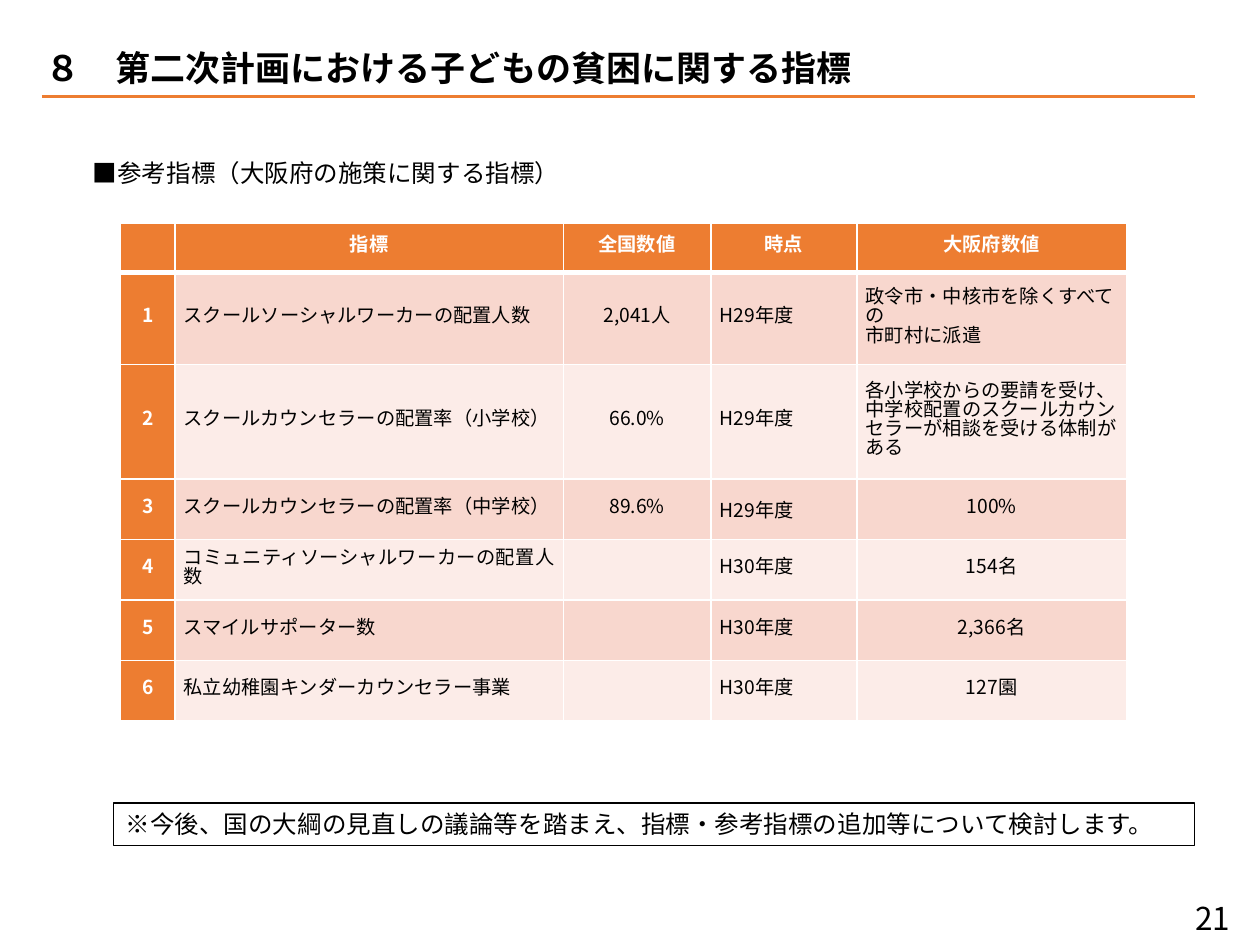
"""Build the slide of reference indicators on child poverty."""
from lxml import etree
from pptx import Presentation
from pptx.dml.color import RGBColor
from pptx.enum.shapes import MSO_CONNECTOR, MSO_SHAPE
from pptx.enum.text import MSO_ANCHOR, PP_ALIGN
from pptx.oxml.ns import qn
from pptx.util import Pt

LEFT, CENTER, JUSTIFY = PP_ALIGN.LEFT, PP_ALIGN.CENTER, PP_ALIGN.JUSTIFY
MIDDLE = MSO_ANCHOR.MIDDLE
FONT = "Noto Sans CJK JP"
COLORS = {"accent": "ED7D31", "dark_band": "F8D7CE", "light_band": "FCECE8",
          "text": "000000", "white": "FFFFFF"}


def color(name):
    return RGBColor.from_string(COLORS[name])


def write(frame, text, size=14, ink="text", bold=False, align=LEFT, spacing=None, wrap=True):
    frame.word_wrap = wrap
    for index, line in enumerate(text.split("\n")):
        para = frame.add_paragraph() if index else frame.paragraphs[0]
        para.alignment = align
        if spacing:
            para.line_spacing = Pt(spacing)
        span = para.add_run()
        span.text = line
        span.font.size = Pt(size)
        span.font.bold = bold
        span.font.name = FONT
        span.font.color.rgb = color(ink)
        etree.SubElement(span.font._element, qn("a:ea"), typeface=FONT)


deck = Presentation()
deck.slide_width, deck.slide_height = Pt(720), Pt(540)
page = deck.slides.add_slide(deck.slide_layouts[5])

title = page.shapes.title
title.left, title.top, title.width, title.height = Pt(18.7), Pt(23), Pt(625), Pt(31.5)
title.text_frame.vertical_anchor = MIDDLE
write(title.text_frame, "８\u3000第二次計画における子どもの貧困に関する指標".replace("\u3000", "　"), size=20, bold=True)

rule = page.shapes.add_connector(MSO_CONNECTOR.STRAIGHT, Pt(24), Pt(55), Pt(683), Pt(55))
rule.line.color.rgb = color("accent")
rule.line.width = Pt(1.5)
etree.SubElement(rule._element.spPr, qn("a:effectLst"))

heading = page.shapes.add_textbox(Pt(46), Pt(87), Pt(659), Pt(24.5))
write(heading.text_frame, "■参考指標（大阪府の施策に関する指標）")

rows = [
    ("", "指標", "全国数値", "時点", "大阪府数値"),
    ("1", "スクールソーシャルワーカーの配置人数", "2,041人", "H29年度",
     "政令市・中核市を除くすべての\n市町村に派遣"),
    ("2", "スクールカウンセラーの配置率（小学校）", "66.0%", "H29年度",
     "各小学校からの要請を受け、中学校配置のスクールカウンセラーが相談を受ける体制がある"),
    ("3", "スクールカウンセラーの配置率（中学校）", "89.6%", "H29年度", "100%"),
    ("4", "コミュニティソーシャルワーカーの配置人数", "", "H30年度", "154名"),
    ("5", "スマイルサポーター数", "", "H30年度", "2,366名"),
    ("6", "私立幼稚園キンダーカウンセラー事業", "", "H30年度", "127園"),
]
widths = [31, 222, 84.2, 83.5, 154]
heights = [28.6, 52.5, 65.3] + [34.6] * 4
alignments = [CENTER, JUSTIFY, CENTER, LEFT, CENTER]

table = page.shapes.add_table(len(rows), len(widths), Pt(69), Pt(127.3),
                              Pt(sum(widths)), Pt(sum(heights))).table
for column, width in zip(table.columns, widths):
    column.width = Pt(width)
for row, height in zip(table.rows, heights):
    row.height = Pt(height)

for r, values in enumerate(rows):
    for c, text in enumerate(values):
        cell = table.cell(r, c)
        cell.vertical_anchor = MIDDLE
        cell.margin_left = cell.margin_right = Pt(5)
        cell.margin_top = cell.margin_bottom = 0

        properties = cell._tc.get_or_add_tcPr()
        for side in "LRTB":
            under_header = (r, side) in ((0, "B"), (1, "T"))
            border = etree.SubElement(properties, qn(f"a:ln{side}"),
                                      w=str(Pt(3 if under_header else 1)))
            fill = etree.SubElement(border, qn("a:solidFill"))
            etree.SubElement(fill, qn("a:srgbClr"), val=COLORS["white"])

        is_header = r == 0 or c == 0
        band = "dark_band" if r % 2 else "light_band"
        cell.fill.solid()
        cell.fill.fore_color.rgb = color("accent" if is_header else band)

        align = CENTER if r == 0 else alignments[c]
        if c == 4 and r in (1, 2):
            align = LEFT
        if text:
            write(cell.text_frame, text, size=11, ink="white" if is_header else "text",
                  bold=is_header, align=align, spacing=None if (r, c) == (3, 3) else 11)

note = page.shapes.add_shape(MSO_SHAPE.RECTANGLE, Pt(64.8), Pt(458.8), Pt(618), Pt(24.3))
note.shadow.inherit = False
note.fill.background()
note.line.color.rgb = color("text")
note.line.width = Pt(0.75)
write(note.text_frame, "※今後、国の大綱の見直しの議論等を踏まえ、指標・参考指標の追加等について検討します。")

number = page.shapes.add_textbox(Pt(676), Pt(510), Pt(36.7), Pt(29))
write(number.text_frame, "21", size=18, wrap=False)

deck.save("out.pptx")
